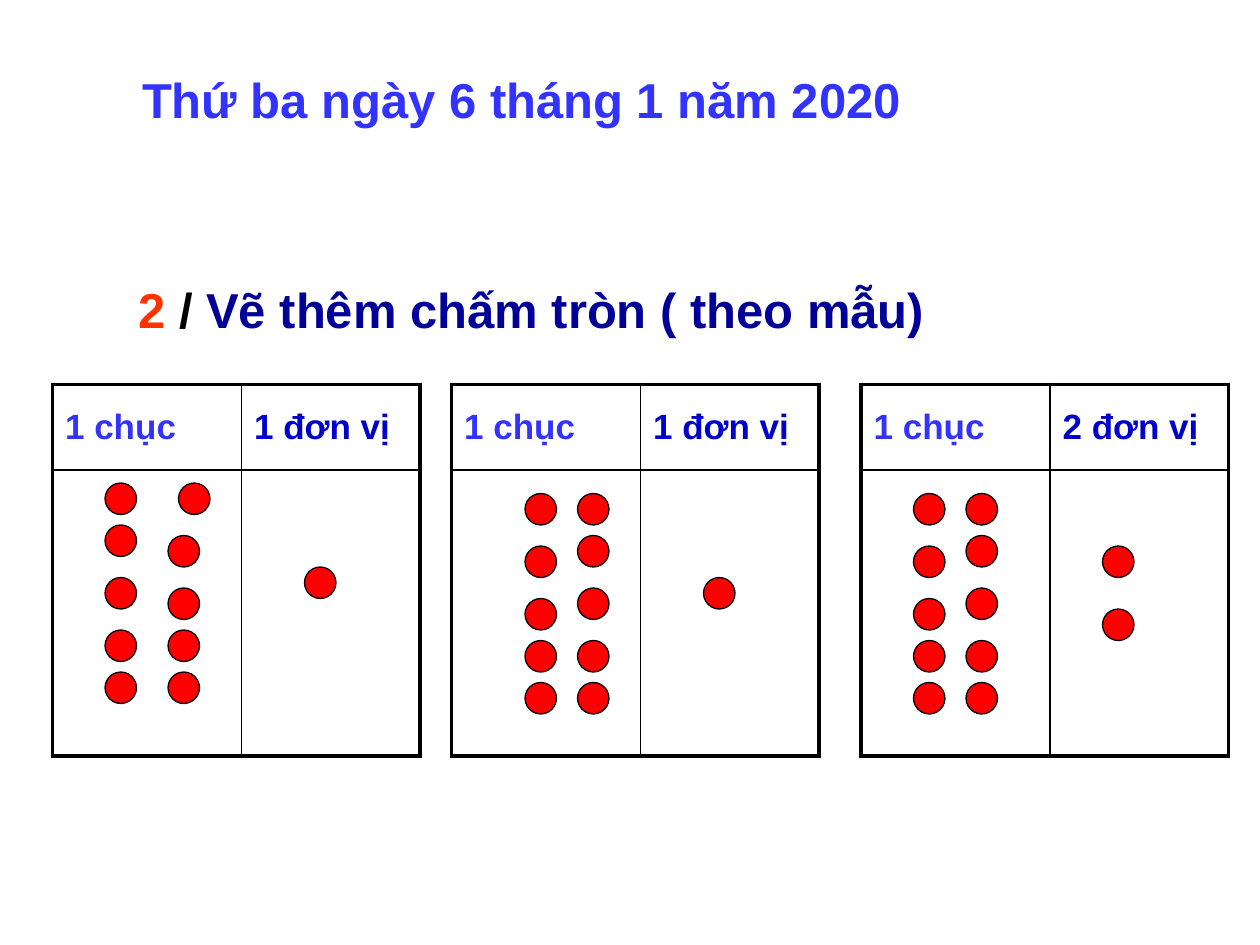
"""Build a maths slide with three tens-and-units tables filled with dots."""
from dataclasses import dataclass

from lxml import etree
from pptx import Presentation
from pptx.dml.color import RGBColor
from pptx.enum import shapes, text
from pptx.oxml import ns
from pptx.util import Pt

BLACK = RGBColor(0, 0, 0)
RED = RGBColor(0xFF, 0, 0)
ORANGE = RGBColor(0xFF, 0x33, 0)
BLUE = RGBColor(0x33, 0x33, 0xFF)
DEEP = RGBColor(0, 0, 0xCC)
NAVY = RGBColor(0, 0, 0x99)

TOP, DOT = 219.6, 18
COLS, ROWS = (108, 102), (49, 163.4)
THICK, THIN = 2.25, 1
FRAME = {
    "word_wrap": True,
    "auto_size": text.MSO_AUTO_SIZE.NONE,
    "vertical_anchor": text.MSO_ANCHOR.TOP,
}


@dataclass
class Card:
    """A table with its labels and the top-left corners of its dots."""
    left: float
    unit: str
    dots: list[tuple[float, float]]


def column(x: float, *tops: float) -> list[tuple[float, float]]:
    """Place dots below each other."""
    return [(x, y) for y in tops]


def pair(x: float) -> list[tuple[float, float]]:
    """Place ten dots in two columns."""
    return (column(x, 282, 312, 342, 366, 390)
            + column(x + 30, 282, 306, 336, 366, 390))


CARDS = [
    Card(30, "1 đơn vị", column(60, 276, 300, 330, 360, 384) + [(102, 276)]
         + column(96, 306, 336, 360, 384) + [(174, 324)]),
    Card(258, "1 đơn vị", pair(300) + [(402, 330)]),
    Card(492, "2 đơn vị", pair(522) + column(630, 312, 348)),
]


def write(para, words: str, size: float, hue: RGBColor) -> None:
    """Add a bold run to a paragraph."""
    run = para.add_run()
    run.text = words
    look = {"name": "Arial", "size": Pt(size), "bold": True}
    for key, val in look.items():
        setattr(run.font, key, val)
    run.font.color.rgb = hue


def fit(shape, box: tuple[float, ...], runs: list[tuple[str, RGBColor]]) -> None:
    """Place a shape and fill it with one line of heading text."""
    for key, val in zip(("left", "top", "width", "height"), box):
        setattr(shape, key, Pt(val))
    frame = shape.text_frame
    for key, val in FRAME.items():
        setattr(frame, key, val)
    para = frame.paragraphs[0]
    para.alignment = text.PP_ALIGN.LEFT
    for words, hue in runs:
        write(para, words, 28, hue)


def edge(cell, row: int, col: int) -> None:
    """Draw thick lines on the outside of the table and thin ones inside."""
    thick = {"lnL": col == 0, "lnR": col == 1, "lnT": row == 0, "lnB": row == 1}
    props = cell._tc.get_or_add_tcPr()
    for pos, (side, outer) in enumerate(thick.items()):
        line = etree.Element(ns.qn(f"a:{side}"), w=str(Pt(THICK if outer else THIN)))
        fill = etree.SubElement(line, ns.qn("a:solidFill"))
        etree.SubElement(fill, ns.qn("a:srgbClr"), val=str(BLACK))
        props.insert(pos, line)


def grid(slide, card: Card) -> None:
    """Draw the table of a card."""
    box = (card.left, TOP, sum(COLS), sum(ROWS))
    table = slide.shapes.add_table(2, 2, *map(Pt, box)).table
    table.first_row = table.horz_banding = False
    for col, width in zip(table.columns, COLS):
        col.width = Pt(width)
    for row, height in zip(table.rows, ROWS):
        row.height = Pt(height)
    for row in range(2):
        for col in range(2):
            cell = table.cell(row, col)
            cell.fill.background()
            edge(cell, row, col)
    for col, (words, hue) in enumerate([("1 chục", BLUE), (card.unit, DEEP)]):
        cell = table.cell(0, col)
        cell.vertical_anchor = text.MSO_ANCHOR.MIDDLE
        write(cell.text_frame.paragraphs[0], words, 20, hue)


def dot(slide, x: float, y: float) -> None:
    """Draw one red dot."""
    shape = slide.shapes.add_shape(
        shapes.MSO_SHAPE.OVAL, Pt(x), Pt(y), Pt(DOT), Pt(DOT))
    shape.shadow.inherit = False
    shape.fill.solid()
    shape.fill.fore_color.rgb = RED
    shape.line.color.rgb = BLACK
    shape.line.width = Pt(0.75)


def main() -> None:
    """Build and save the slide."""
    deck = Presentation()
    deck.slide_width, deck.slide_height = Pt(720), Pt(540)
    slide = deck.slides.add_slide(deck.slide_layouts.get_by_name("Title Only"))
    fit(slide.shapes.title, (74, 36, 588, 41),
        [("Thứ ba ngày 6 tháng 1 năm 2020", BLUE)])
    task = slide.shapes.add_textbox(0, 0, 0, 0)
    fit(task, (72, 156, 570, 41),
        [("2 ", ORANGE), ("/ ", BLACK), ("Vẽ thêm chấm tròn ( theo mẫu)", NAVY)])
    for card in CARDS:
        grid(slide, card)
        for x, y in card.dots:
            dot(slide, x, y)
    deck.save("out.pptx")


if __name__ == "__main__":
    main()
